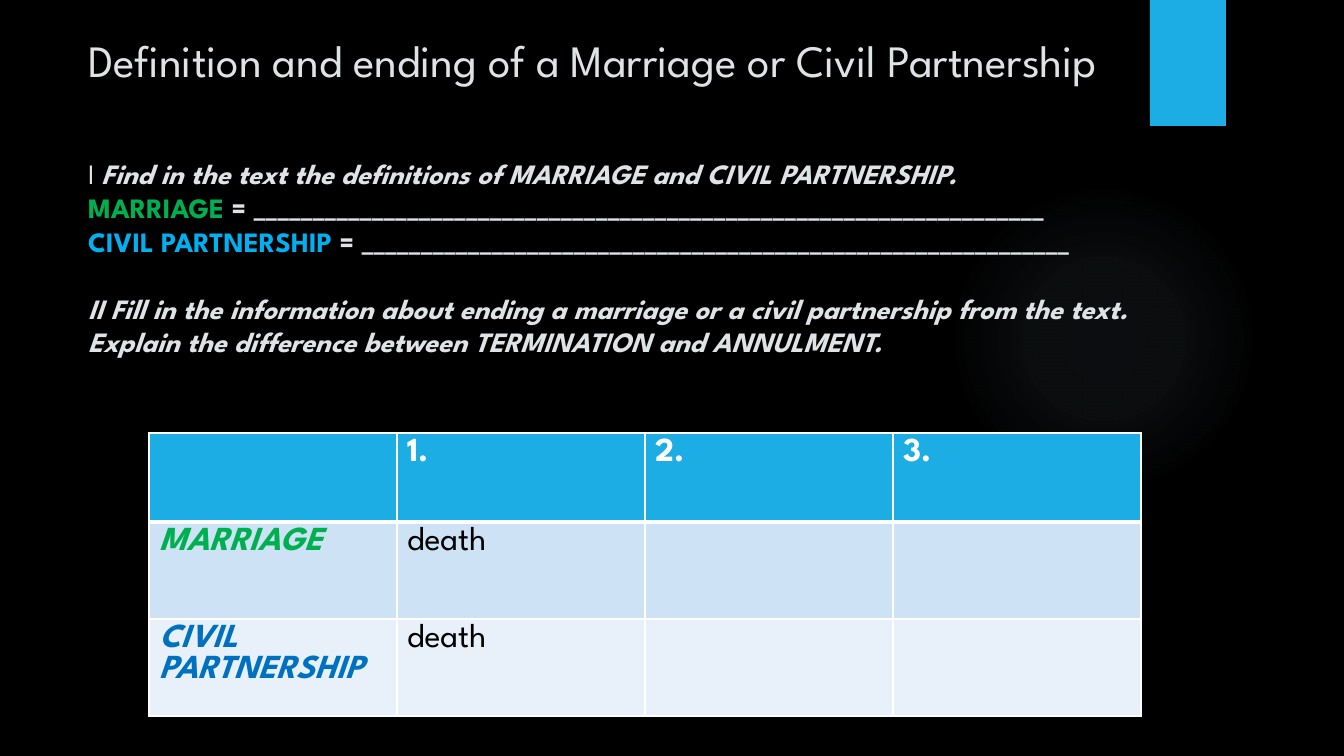
import pptx
import pptx.util
import pptx.oxml
import pptx.oxml.ns
import pptx.dml.color
import pptx.enum.shapes
import pptx.enum.text

PX = 914400 / 100.8
NS = 'xmlns:a="http://schemas.openxmlformats.org/drawingml/2006/main"'
FONT = "League Spartan"
COLORS = {
    "black": "000000", "white": "FFFFFF", "text": "DFE3E5", "accent": "1CADE4",
    "green": "00B050", "sky": "00B0F0", "blue": "0070C0", "glow": "A0C1D5",
    "band1": "CDE3F5", "band2": "E8F1FA",
}
HEADING = "Definition and ending of a Marriage or Civil Partnership"
# Each line: space before in points, then runs of (text, colour, bold, italic)
TASKS = [
    (50, [("I ", "text", False, False),
          ("Find in the text the definitions of MARRIAGE and CIVIL PARTNERSHIP.",
           "text", True, True)]),
    (0, [("MARRIAGE", "green", True, False),
         (" = " + "_" * 67, "text", True, False)]),
    (0, [("CIVIL PARTNERSHIP ", "sky", True, False),
         ("= " + "_" * 60, "text", True, False)]),
    (24, [("II Fill in the information about ending a marriage or a civil "
           "partnership from the text.", "text", True, True)]),
    (0, [("Explain the difference between TERMINATION and ANNULMENT.",
          "text", True, True)]),
]
# Each row: height, fill, label colour, cell texts
ROWS = [
    (89, "accent", "white", ["", "1.", "2.", "3."]),
    (97, "band1", "green", ["MARRIAGE", "death", "", ""]),
    (97, "band2", "blue", ["CIVIL PARTNERSHIP", "death", "", ""]),
]
COL_WIDTH = 248


def px(n):
    return pptx.util.Emu(round(n * PX))


def rgb(name):
    return pptx.dml.color.RGBColor.from_string(COLORS[name])


def style(font, size, color, bold=False, italic=False):
    font.name, font.size = FONT, pptx.util.Pt(size)
    font.color.rgb = rgb(color)
    font.bold, font.italic = bold, italic


def add_block(s, kind, x, y, w, h, color):
    sp = s.shapes.add_shape(kind, px(x), px(y), px(w), px(h))
    sp.shadow.inherit = False
    sp.fill.solid()
    sp.fill.fore_color.rgb = rgb(color)
    sp.line.fill.background()
    return sp


def add_glow(s):
    """Add a circle that fades out towards its edge."""
    sp = add_block(s, pptx.enum.shapes.MSO_SHAPE.OVAL, 949, 184, 310, 310, "glow")
    stops = "".join(
        f'<a:gs pos="{pos}000"><a:srgbClr val="{COLORS["glow"]}">'
        f'<a:alpha val="{alpha}000"/></a:srgbClr></a:gs>'
        for pos, alpha in [(0, 7), (36, 6), (69, 0), (100, 0)])
    grad = pptx.oxml.parse_xml(
        f'<a:gradFill {NS}><a:gsLst>{stops}</a:gsLst><a:path path="circle">'
        '<a:fillToRect l="50000" t="50000" r="50000" b="50000"/></a:path></a:gradFill>')
    props = sp._element.spPr
    props.replace(props.find(pptx.oxml.ns.qn("a:solidFill")), grad)


def fill_title(s):
    sp = s.shapes.title
    s.shapes._spTree.append(sp._element)  # in front of the glow
    sp.left, sp.top, sp.width, sp.height = px(78), px(27), px(1149), px(136)
    tf = sp.text_frame
    tf.word_wrap = True
    tf.auto_size = pptx.enum.text.MSO_AUTO_SIZE.NONE
    tf.vertical_anchor = pptx.enum.text.MSO_ANCHOR.TOP
    tf.margin_top = px(6)
    p = tf.paragraphs[0]
    p.text = HEADING
    p.alignment = pptx.enum.text.PP_ALIGN.LEFT
    style(p.font, 32, "text")
    for before, runs in TASKS:
        p = tf.add_paragraph()
        p.alignment = pptx.enum.text.PP_ALIGN.LEFT
        p.line_spacing = pptx.util.Pt(24)
        p.space_before = pptx.util.Pt(before)
        for text, color, bold, italic in runs:
            r = p.add_run()
            r.text = text
            style(r.font, 20, color, bold, italic)


def set_borders(cell, top, bottom):
    """Draw white borders, with the top and bottom widths in points."""
    widths = {"lnL": 1, "lnR": 1, "lnT": top, "lnB": bottom}
    for i, (tag, width) in enumerate(widths.items()):
        cell._tc.get_or_add_tcPr().insert(i, pptx.oxml.parse_xml(
            f'<a:{tag} {NS} w="{pptx.util.Pt(width)}"><a:solidFill>'
            f'<a:srgbClr val="{COLORS["white"]}"/></a:solidFill></a:{tag}>'))


def add_endings_table(s):
    height = sum(row[0] for row in ROWS)
    table = s.shapes.add_table(len(ROWS), 4, px(149), px(433),
                               px(4 * COL_WIDTH), px(height)).table
    for col in table.columns:
        col.width = px(COL_WIDTH)
    for i, (h, fill, label_color, texts) in enumerate(ROWS):
        table.rows[i].height = px(h)
        for j, text in enumerate(texts):
            cell = table.cell(i, j)
            cell.fill.solid()
            cell.fill.fore_color.rgb = rgb(fill)
            set_borders(cell, 3 if i == 1 else 1, 3 if i == 0 else 1)
            if text:
                p = cell.text_frame.paragraphs[0]
                p.text = text
                header, label = i == 0, j == 0
                color = label_color if header or label else "black"
                style(p.font, 24, color, header or label, label)


def main():
    prs = pptx.Presentation()
    prs.slide_width, prs.slide_height = px(1344), px(756)
    s = prs.slides.add_slide(prs.slide_layouts[5])
    s.background.fill.solid()
    s.background.fill.fore_color.rgb = rgb("black")
    add_glow(s)
    add_block(s, pptx.enum.shapes.MSO_SHAPE.RECTANGLE, 1150, 0, 76, 126, "accent")
    fill_title(s)
    add_endings_table(s)
    prs.save("out.pptx")


if __name__ == "__main__":
    main()
